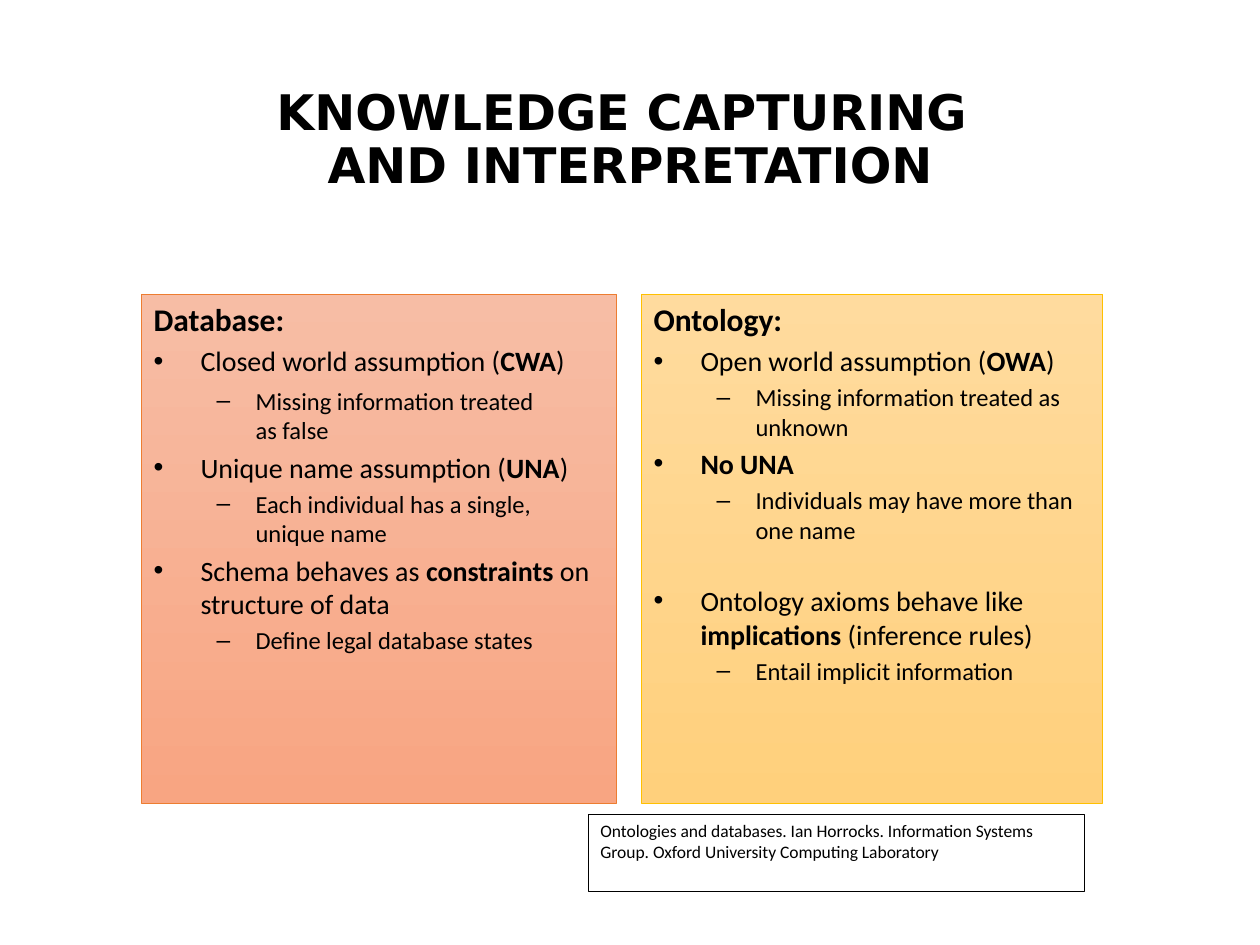
import pptx
import pptx.dml.color
import pptx.enum.text
import pptx.oxml.ns
import pptx.util
from lxml import etree

RGB = pptx.dml.color.RGBColor
BLACK = RGB(0x00, 0x00, 0x00)
WHITE = RGB(0xFF, 0xFF, 0xFF)
SALMON = RGB(0xF7, 0xBD, 0xA5)
SALMON_DEEP = RGB(0xF8, 0xA5, 0x82)
ORANGE = RGB(0xED, 0x7D, 0x31)
CREAM = RGB(0xFF, 0xDB, 0x9E)
CREAM_DEEP = RGB(0xFF, 0xD0, 0x7C)
GOLD = RGB(0xFF, 0xC0, 0x00)

PX = 914400 // 126
PANEL_TOP, PANEL_HEIGHT = 294, 509

# Each item is (level, text); *stars* mark bold words.
DATABASE = [
    (0, "Closed world assumption (*CWA*)"),
    (1, "Missing information treated \nas false"),
    (0, "Unique name assumption (*UNA*)"),
    (1, "Each individual has a single, unique name"),
    (0, "Schema behaves as *constraints* on structure of data"),
    (1, "Define legal database states"),
]
ONTOLOGY = [
    (0, "Open world assumption (*OWA*)"),
    (1, "Missing information treated as unknown"),
    (0, "*No UNA*"),
    (1, "Individuals may have more than one name"),
    (0, "Ontology axioms behave like *implications* (inference rules)"),
    (1, "Entail implicit information"),
]


class SlideBuilder:
    SIZES = (16, 14)
    INDENTS = ((47, -47), (102, -39))

    def __init__(self, slide):
        self.slide = slide

    def place(self, sp, *box):
        sp.left, sp.top, sp.width, sp.height = (v * PX for v in box)

    def outline(self, sp, color, width):
        sp.line.color.rgb = color
        sp.line.width = pptx.util.Pt(width)

    def add_text(self, p, text, size, name="Calibri", bold=False):
        """Add text to a paragraph; *stars* switch bold, newlines break lines."""
        for i, part in enumerate(text.split("*")):
            style = {"size": pptx.util.Pt(size), "name": name,
                     "bold": bold or i % 2 == 1}
            for j, line in enumerate(part.split("\n")):
                if j:
                    p.add_line_break()
                if not line:
                    continue
                r = p.add_run()
                r.text = line
                r.font.color.rgb = BLACK
                for key, value in style.items():
                    setattr(r.font, key, value)

    def indent(self, p, level):
        p.level = level
        pPr = p._p.get_or_add_pPr()
        for key, value in zip(("marL", "indent"), self.INDENTS[level]):
            pPr.set(key, str(value * PX))
        return pPr

    def title(self, text, *box):
        sp = self.slide.shapes.title
        self.place(sp, *box)
        tf = sp.text_frame
        tf.auto_size = pptx.enum.text.MSO_AUTO_SIZE.NONE
        tf.vertical_anchor = pptx.enum.text.MSO_ANCHOR.MIDDLE
        p = tf.paragraphs[0]
        p.alignment = pptx.enum.text.PP_ALIGN.CENTER
        p.line_spacing = 0.9
        self.add_text(p, text, 28, "DejaVu Sans", True)

    def panel(self, idx, heading, items, left, width, colors, border):
        sp = self.slide.placeholders[idx]
        self.place(sp, left, PANEL_TOP, width, PANEL_HEIGHT)
        sp.fill.gradient()
        sp.fill.gradient_angle = 270
        for stop, position, color in zip(sp.fill.gradient_stops, (0, 1), colors):
            stop.position = position
            stop.color.rgb = color
        self.outline(sp, border, 0.5)
        tf = sp.text_frame
        tf.auto_size = pptx.enum.text.MSO_AUTO_SIZE.NONE
        p = tf.paragraphs[0]
        pPr = self.indent(p, 0)
        etree.SubElement(pPr, pptx.oxml.ns.qn("a:buNone"))
        self.add_text(p, heading, 18, bold=True)
        for level, text in items:
            p = tf.add_paragraph()
            self.indent(p, level)
            self.add_text(p, text, self.SIZES[level])
        return tf

    def note(self, text, *box):
        sp = self.slide.shapes.add_textbox(*(v * PX for v in box))
        sp.fill.solid()
        sp.fill.fore_color.rgb = WHITE
        self.outline(sp, BLACK, 0.25)
        tf = sp.text_frame
        tf.word_wrap = True
        self.add_text(tf.paragraphs[0], text, 10)


def main():
    prs = pptx.Presentation()
    prs.slide_width, prs.slide_height = pptx.util.Inches(10), pptx.util.Inches(7.5)
    s = SlideBuilder(prs.slides.add_slide(prs.slide_layouts.get_by_name("Two Content")))
    s.title("KNOWLEDGE CAPTURING \nAND INTERPRETATION", 87, 50, 1086, 183)
    s.panel(1, "Database:", DATABASE, 141, 476, (SALMON, SALMON_DEEP), ORANGE)
    tf = s.panel(2, "Ontology:", ONTOLOGY, 641, 462, (CREAM, CREAM_DEEP), GOLD)
    tf.paragraphs[5].space_before = pptx.util.Pt(22.6)
    s.note("Ontologies and databases. Ian Horrocks. Information Systems Group. "
           "Oxford University Computing Laboratory", 588, 814, 496, 77)
    prs.save("out.pptx")


if __name__ == "__main__":
    main()
